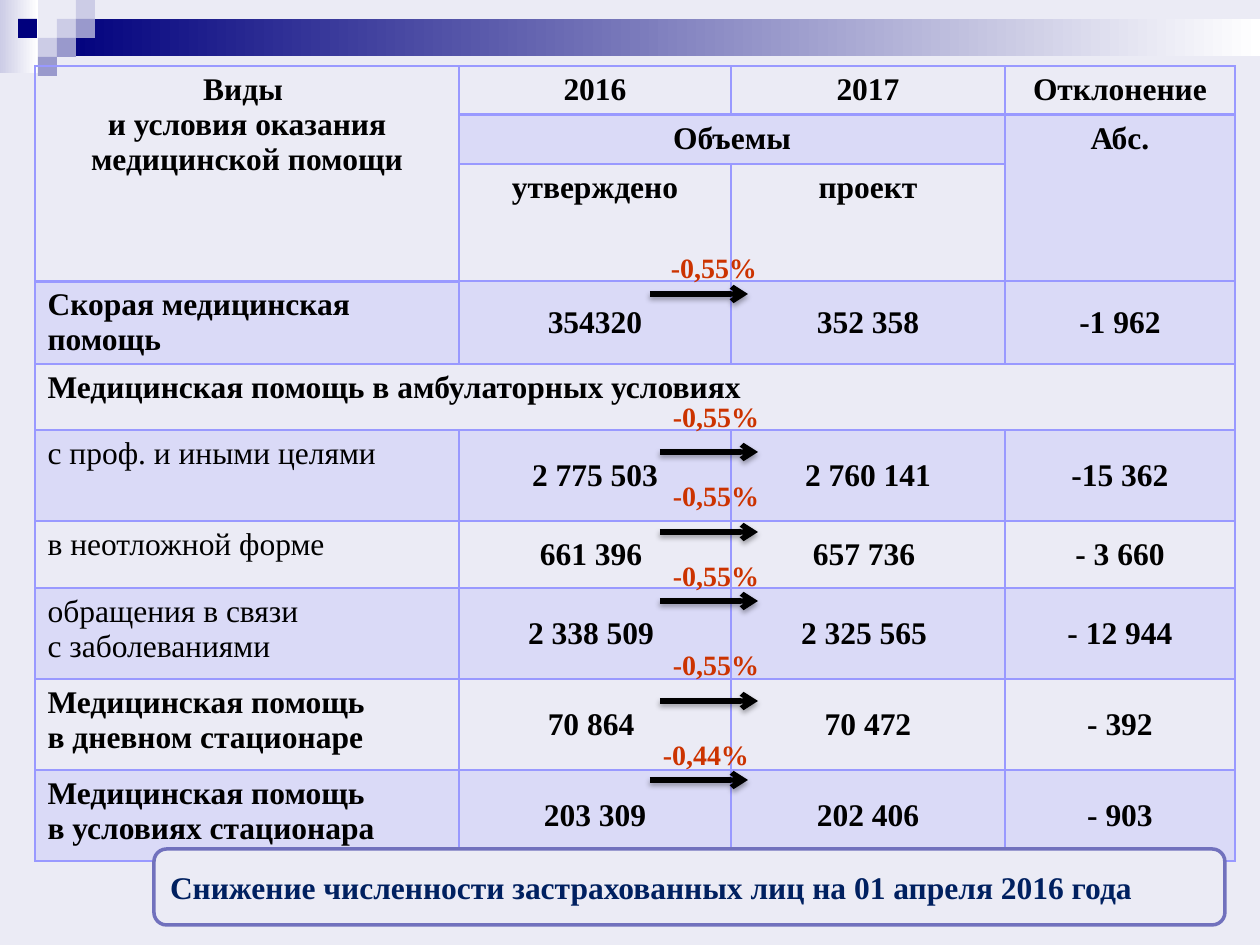
from lxml.etree import SubElement
from pptx import Presentation
from pptx.dml.color import RGBColor
from pptx.enum.shapes import MSO_CONNECTOR, MSO_SHAPE
from pptx.enum.text import MSO_ANCHOR, PP_ALIGN
from pptx.oxml.ns import qn
from pptx.util import Emu, Pt

SCALE = 914400 / 126
FONT = "Times New Roman"
BACK, EDGE = "EBEBF5", "9999FF"
NAVY, PALE, MID = "00007D", "CCCCE6", "9999CC"

COLS = [424, 272, 274, 230]
ROWS = [49, 49, 117, 83, 66, 91, 67, 91, 91, 91]
CELLS = [
    ("Виды \vи условия оказания медицинской помощи", "2016", "2017", "Отклонение"),
    ("", "Объемы", "", "Абс."),
    ("", "утверждено", "проект", ""),
    ("Скорая медицинская помощь", "354320", "352 358", "-1 962"),
    ("Медицинская помощь в амбулаторных условиях", "", "", ""),
    ("с проф. и иными целями", "2 775 503", "2 760 141", "-15 362"),
    ("в неотложной форме", "661 396 ", "657 736 ", "- 3 660"),
    ("обращения в связи \vс заболеваниями", "2 338 509 ", "2 325 565 ", "- 12 944"),
    ("Медицинская помощь\nв дневном стационаре", "70 864 ", "70 472", "- 392"),
    ("Медицинская помощь \vв условиях стационара", "203 309", "202 406", "- 903"),
]
MERGES = [(0, 0, 2, 0), (1, 1, 1, 2), (1, 3, 2, 3), (4, 0, 4, 3)]
HEAD = 3
TINTED = {1, 3, 5, 7, 9}
PLAIN = {5, 6, 7}

# left, label top, label width, arrow height on the slide, wording
TRENDS = [
    (650, 244, 128, 294, "-0,55%"),
    (660, 393, 112, 452, "-0,55%"),
    (660, 472, 112, 532, "-0,55%"),
    (660, 552, 112, 601, "-0,55%"),
    (660, 641, 112, 701, "-0,55%"),
    (650, 731, 112, 780, "-0,44%"),
]
SQUARES = [
    (57, 19, PALE), (76, 0, PALE), (76, 19, MID), (38, 38, PALE),
    (18, 19, NAVY), (57, 38, MID), (38, 57, MID),
]


def px(num):
    return Emu(round(num * SCALE))


def box(*nums):
    return [px(num) for num in nums]


def color(code):
    return RGBColor.from_string(code)


def style(frame, size, code, align, bold=True):
    for para in frame.paragraphs:
        para.alignment = align
        font = para.font
        font.name, font.size, font.bold = FONT, Pt(size), bold
        font.color.rgb = color(code)


def add_block(slide, area, *codes):
    """Add a borderless rectangle: one colour is solid, two make a gradient."""
    block = slide.shapes.add_shape(MSO_SHAPE.RECTANGLE, *box(*area))
    block.shadow.inherit = False
    block.line.fill.background()
    if len(codes) == 1:
        block.fill.solid()
        block.fill.fore_color.rgb = color(codes[0])
        return
    block.fill.gradient()
    block.fill.gradient_angle = 0
    for place, (stop, code) in enumerate(zip(block.fill.gradient_stops, codes)):
        stop.position = place
        stop.color.rgb = color(code)


def add_band(slide):
    add_block(slide, (0, 0, 38, 73), PALE, "FFFFFF")
    add_block(slide, (57, 19, 1203, 37), NAVY, "FFFFFF")
    for left, top, code in SQUARES:
        add_block(slide, (left, top, 19, 19), code)


def put_fill(parent, code, alpha=100):
    fill = SubElement(parent, qn("a:solidFill"))
    tone = SubElement(fill, qn("a:srgbClr"), val=code)
    SubElement(tone, qn("a:alpha"), val=str(alpha * 1000))


def paint_cell(cell, row):
    props = cell._tc.get_or_add_tcPr()
    for side in ("lnL", "lnR", "lnT", "lnB"):
        thick = 2 if row == 0 and side == "lnB" else 1
        put_fill(SubElement(props, qn("a:" + side), w=str(Pt(thick))), EDGE)
    if row in TINTED:
        put_fill(props, EDGE, 20)
    else:
        SubElement(props, qn("a:noFill"))


def add_grid(slide):
    area = box(35, 66, sum(COLS), sum(ROWS))
    table = slide.shapes.add_table(len(ROWS), len(COLS), *area).table
    table.first_row = table.horz_banding = False
    for col, width in zip(table.columns, COLS):
        col.width = px(width)
    for row, height in zip(table.rows, ROWS):
        row.height = px(height)
    for top, left, low, right in MERGES:
        table.cell(top, left).merge(table.cell(low, right))
    for row, texts in enumerate(CELLS):
        for col, text in enumerate(texts):
            cell = table.cell(row, col)
            name = col == 0 and row >= HEAD
            if text:
                cell.text = text
            if row == HEAD or (row > HEAD and not name):
                cell.vertical_anchor = MSO_ANCHOR.MIDDLE
            align = PP_ALIGN.LEFT if name else PP_ALIGN.CENTER
            style(cell.text_frame, 18, "000000", align, not (name and row in PLAIN))
            paint_cell(cell, row)


def add_arrow(slide, left, top):
    arrow = slide.shapes.add_connector(
        MSO_CONNECTOR.STRAIGHT, *box(left, top, left + 98, top))
    arrow.line.width = Pt(3)
    arrow.line.color.rgb = color("000000")
    SubElement(arrow.line._get_or_add_ln(), qn("a:tailEnd"), type="arrow")
    effects = SubElement(arrow._element.spPr, qn("a:effectLst"))
    shade = SubElement(effects, qn("a:outerShdw"), blurRad=str(Pt(3.1)),
                       dist=str(Pt(1.8)), dir="5400000", rotWithShape="0")
    tone = SubElement(shade, qn("a:srgbClr"), val="000000")
    SubElement(tone, qn("a:alpha"), val="35000")


def add_label(slide, left, top, width, text):
    frame = slide.shapes.add_textbox(*box(left, top, width, 47)).text_frame
    frame.word_wrap = True
    frame.text = text
    style(frame, 16, "CC3300", PP_ALIGN.CENTER)


def add_note(slide, text):
    note = slide.shapes.add_shape(
        MSO_SHAPE.ROUNDED_RECTANGLE, *box(154, 849, 1071, 76))
    note.shadow.inherit = False
    note.fill.solid()
    note.fill.fore_color.rgb = color(BACK)
    note.line.color.rgb = color("7171BD")
    note.line.width = Pt(2)
    frame = note.text_frame
    frame.word_wrap = True
    frame.vertical_anchor = MSO_ANCHOR.MIDDLE
    frame.text = text
    style(frame, 18, "002060", PP_ALIGN.JUSTIFY)


def main():
    deck = Presentation()
    deck.slide_width, deck.slide_height = box(1260, 945)
    slide = deck.slides.add_slide(deck.slide_layouts[6])
    slide.background.fill.solid()
    slide.background.fill.fore_color.rgb = color(BACK)
    add_band(slide)
    add_grid(slide)
    for left, top, width, level, text in TRENDS:
        add_arrow(slide, left, level)
        add_label(slide, left, top, width, text)
    add_note(slide, "Снижение численности застрахованных лиц на 01 апреля 2016 года")
    deck.save("out.pptx")


if __name__ == "__main__":
    main()
